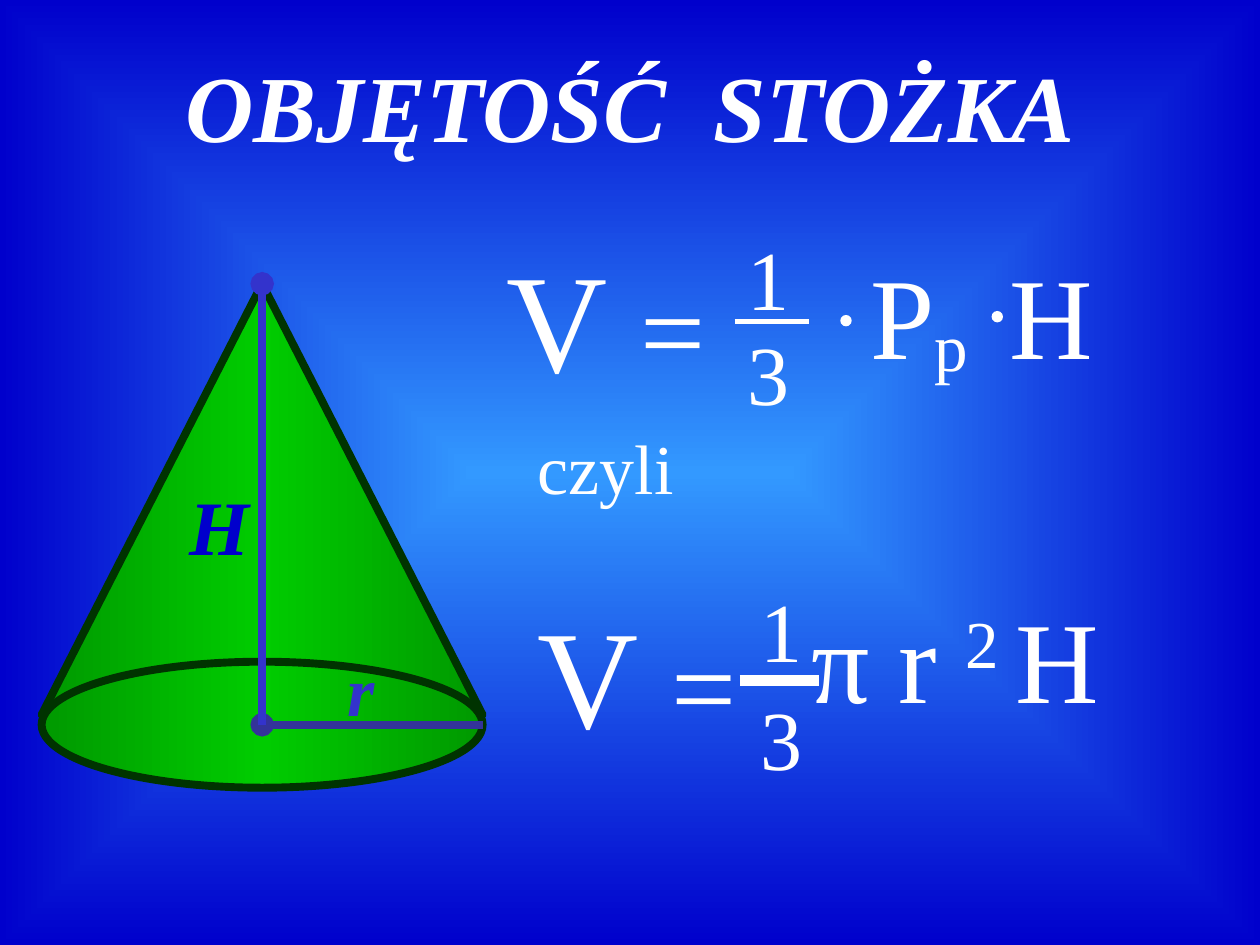
"""Build a slide on the volume of a cone."""
from lxml import etree
from pptx import Presentation
from pptx import util as u
from pptx.dml.color import RGBColor
from pptx.enum import shapes, text
from pptx.oxml.ns import qn

FONT = "Times New Roman"
COLOURS = {
    "white": "FFFFFF", "sky": "3399FF", "navy": "0000CC", "leaf": "009900",
    "lime": "00CC00", "outline": "003300", "radius": "333399", "height": "3333CC",
}
BACKGROUND = [(0, "sky"), (100, "navy")]
CONE_FILL = [(0, "leaf"), (50, "lime"), (100, "leaf")]
CONE = {"left": 0.84, "top": 5.72, "width": 8.89, "side": 8.69, "base": 13.34, "depth": 2.54}

TITLE = [("OBJĘTOŚĆ  STOŻKA", 54, 0)]
VOLUME = [("V ", 80, 0), ("=", 66, 0)]
BASE_TIMES_HEIGHT = [("P", 66, 0), ("p ", 66, -10), (" ", 56, 0), ("H", 66, 0)]
PI_R_SQUARED_H = [("π r ", 66, 0), ("2 ", 66, 30), ("H", 66, 0)]
CONE_LABELS = [("H", 44, "navy", (3.58, 9.53, 1.73, 2.13)),
               ("r", 40, "height", (6.76, 12.9, 1.07, 1.96))]
DOTS = [(16.94, 6.35), (19.99, 6.27)]
DOT_SIZE = 0.23
FRACTIONS = {
    "general": {"left": 14.81, "tops": (4.45, 6.35), "bar": (14.81, 16.31, 6.48), "weight": 3},
    "detailed": {"left": 15.09, "tops": (11.53, 13.72), "bar": (14.91, 16.51, 13.72), "weight": 6},
}


def rgb(name):
    return RGBColor.from_string(COLOURS[name])


def set_gradient(fill, element, stops, centred=False):
    fill.gradient()
    gradient = element.find(".//" + qn("a:gradFill"))
    for child in list(gradient):
        gradient.remove(child)
    stop_list = etree.SubElement(gradient, qn("a:gsLst"))
    for position, name in stops:
        stop = etree.SubElement(stop_list, qn("a:gs"), pos=str(position * 1000))
        etree.SubElement(stop, qn("a:srgbClr"), val=COLOURS[name])
    if centred:
        focus = etree.SubElement(gradient, qn("a:path"), path="shape")
        etree.SubElement(focus, qn("a:fillToRect"), l="50000", t="50000", r="50000", b="50000")
    else:
        etree.SubElement(gradient, qn("a:lin"), ang="0", scaled="1")


def add_text(target, box, runs, colour="white", strong=False, wrap=False, align="LEFT", before=0):
    shape = target.add_textbox(*map(u.Cm, box))
    frame = shape.text_frame
    frame.word_wrap = wrap
    frame.auto_size = text.MSO_AUTO_SIZE.SHAPE_TO_FIT_TEXT
    paragraph = frame.paragraphs[0]
    paragraph.alignment = getattr(text.PP_ALIGN, align)
    paragraph.space_before = u.Pt(before)
    for wording, size, baseline in runs:
        run = paragraph.add_run()
        run.text = wording
        run.font.name = FONT
        run.font.size = u.Pt(size)
        run.font.bold = run.font.italic = strong
        run.font.color.rgb = rgb(colour)
        if baseline:
            run._r.get_or_add_rPr().set("baseline", str(baseline * 1000))


def add_line(target, start, end, colour, weight, oval=None):
    line = target.add_connector(shapes.MSO_CONNECTOR.STRAIGHT, *map(u.Cm, start + end))
    line.line.color.rgb = rgb(colour)
    line.line.width = u.Pt(weight)
    if oval:
        etree.SubElement(line.line._get_or_add_ln(), qn("a:" + oval), type="oval")
    etree.SubElement(line._element.spPr, qn("a:effectLst"))


def add_cone_part(target, kind, top, height):
    box = (CONE["left"], top, CONE["width"], height)
    shape = target.add_shape(kind, *map(u.Cm, box))
    shape.shadow.inherit = False
    set_gradient(shape.fill, shape._element, CONE_FILL)
    shape.line.color.rgb = rgb("outline")
    shape.line.width = u.Pt(4.5)


def add_cone(target):
    add_cone_part(target, shapes.MSO_SHAPE.ISOSCELES_TRIANGLE, CONE["top"], CONE["side"])
    add_cone_part(target, shapes.MSO_SHAPE.OVAL, CONE["base"], CONE["depth"])
    middle = CONE["left"] + CONE["width"] / 2
    centre = (middle, CONE["base"] + CONE["depth"] / 2)
    rim = (CONE["left"] + CONE["width"], centre[1])
    add_line(target, centre, rim, "radius", 4.5, "headEnd")
    add_line(target, centre, (middle, CONE["top"]), "height", 4.5, "tailEnd")
    for wording, size, colour, box in CONE_LABELS:
        add_text(target, box, [(wording, size, 0)], colour=colour, strong=True)


def add_dot(target, left, top):
    dot = target.add_shape(shapes.MSO_SHAPE.OVAL, *map(u.Cm, (left, top, DOT_SIZE, DOT_SIZE)))
    dot.shadow.inherit = False
    dot.fill.solid()
    dot.fill.fore_color.rgb = rgb("white")
    dot.line.fill.background()


def add_third(target, fraction):
    for digit, top in zip("13", fraction["tops"]):
        add_text(target, (fraction["left"], top, 1.35, 2.29), [(digit, 48, 0)])
    left, right, level = fraction["bar"]
    add_line(target, (left, level), (right, level), "white", fraction["weight"])


def main():
    presentation = Presentation()
    presentation.slide_width, presentation.slide_height = u.Cm(25.4), u.Cm(19.05)
    slide = presentation.slides.add_slide(presentation.slide_layouts[6])
    set_gradient(slide.background.fill, slide._element, BACKGROUND, centred=True)

    add_text(slide.shapes, (2.54, 0.84, 20.32, 2.54), TITLE,
             strong=True, wrap=True, align="CENTER", before=6)

    detailed = slide.shapes.add_group_shape().shapes
    add_text(detailed, (10.59, 11.73, 4.57, 3.63), VOLUME)
    add_text(detailed, (16.1, 11.73, 6.58, 3.05), PI_R_SQUARED_H)

    add_cone(slide.shapes.add_group_shape().shapes)

    general = slide.shapes.add_group_shape().shapes
    add_text(general, (9.96, 4.57, 4.65, 3.63), VOLUME, wrap=True)
    add_text(general, (17.3, 4.8, 6.2, 3.05), BASE_TIMES_HEIGHT, wrap=True)
    for left, top in DOTS:
        add_dot(general, left, top)
    add_third(general, FRACTIONS["general"])

    add_text(slide.shapes, (10.59, 8.43, 3.25, 1.96), [("czyli", 40, 0)])
    add_third(slide.shapes, FRACTIONS["detailed"])
    presentation.save("out.pptx")


if __name__ == "__main__":
    main()
